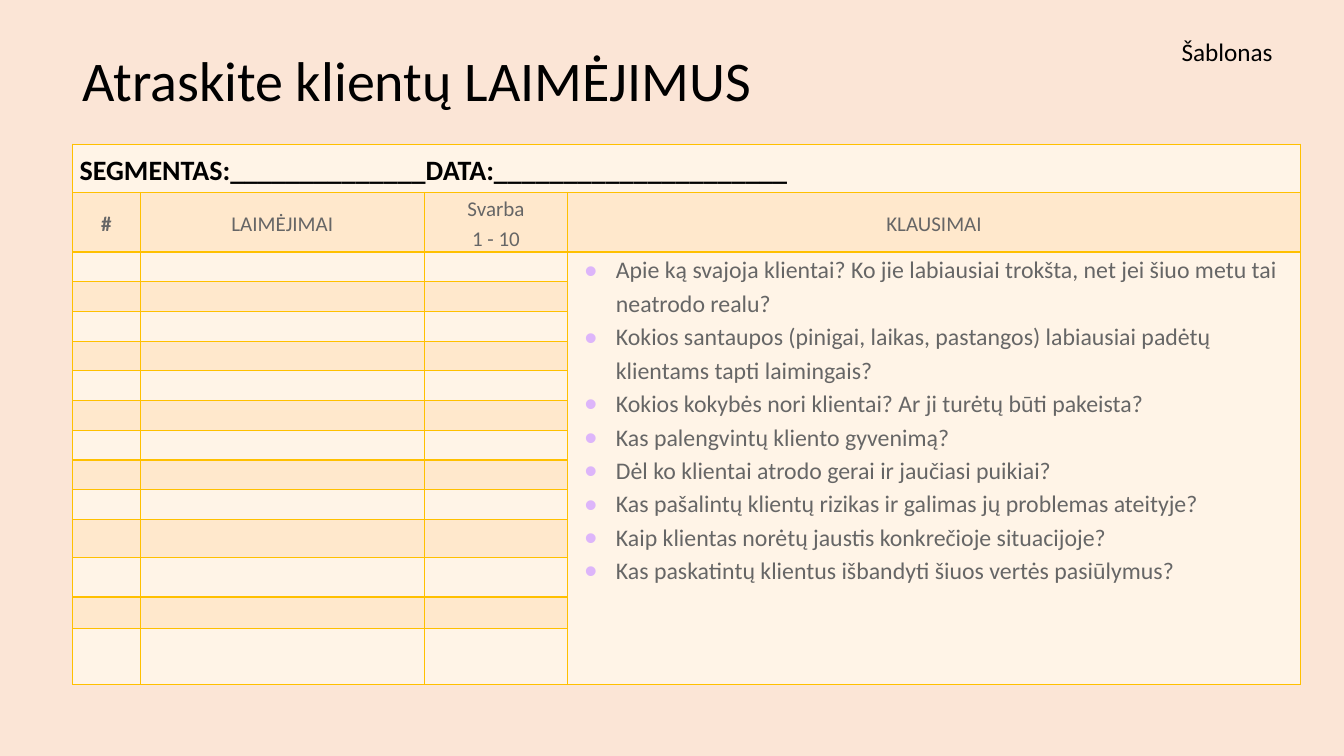
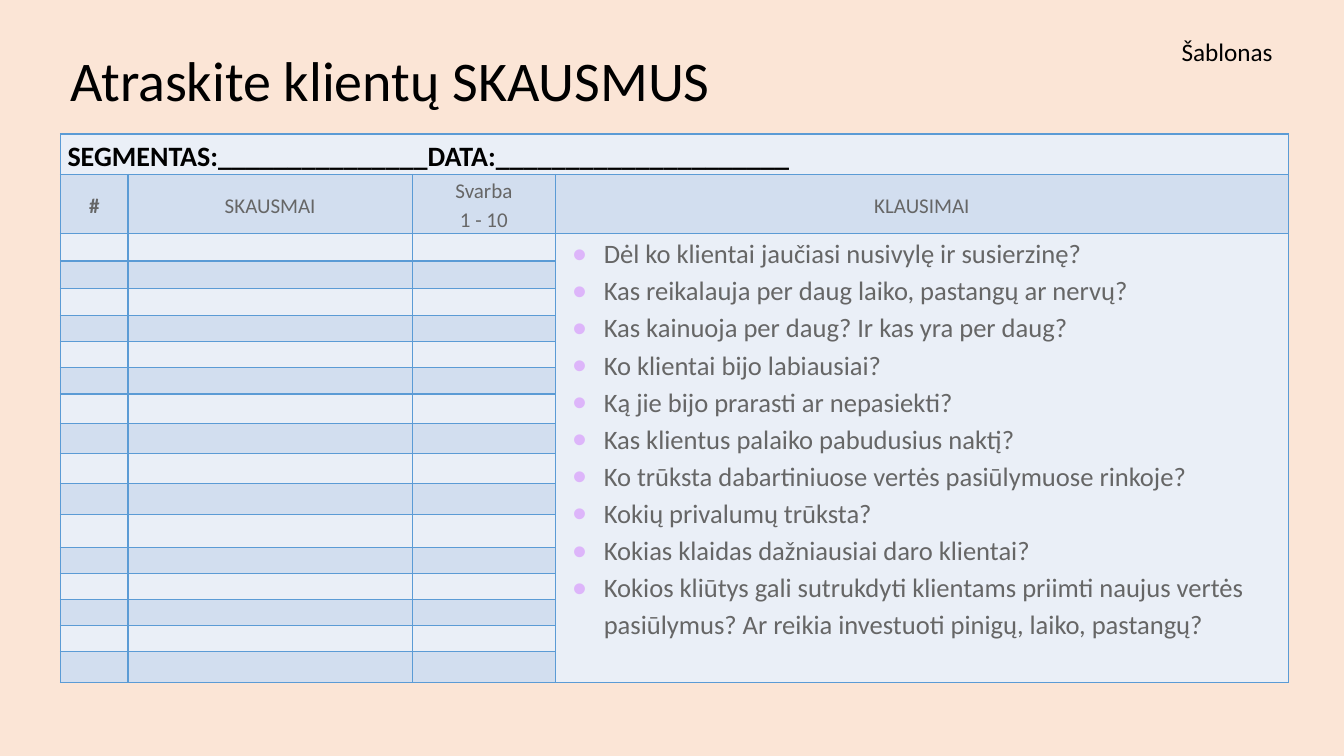
from lxml import etree
from pptx import Presentation
from pptx.dml.color import RGBColor
from pptx.enum.shapes import MSO_SHAPE
from pptx.enum.text import MSO_ANCHOR, MSO_AUTO_SIZE, PP_ALIGN
from pptx.oxml.ns import qn
from pptx.util import Inches, Pt

RECTANGLE = MSO_SHAPE.RECTANGLE
TOP, MIDDLE = MSO_ANCHOR.TOP, MSO_ANCHOR.MIDDLE
LEFT, CENTER = PP_ALIGN.LEFT, PP_ALIGN.CENTER
GROW = MSO_AUTO_SIZE.SHAPE_TO_FIT_TEXT

# Shared look
FONT = "Calibri"
BLACK = RGBColor(0x00, 0x00, 0x00)
GREY = RGBColor(0x66, 0x66, 0x66)
PEACH = RGBColor(0xFB, 0xE5, 0xD6)
LILAC = RGBColor(0xDD, 0xB5, 0xFA)
GOLD = RGBColor(0xFF, 0xC0, 0x00)
CREAM = RGBColor(0xFF, 0xF4, 0xE7)
APRICOT = RGBColor(0xFF, 0xE8, 0xCC)
BLUE = RGBColor(0x5B, 0x9B, 0xD5)
ICE = RGBColor(0xEA, 0xEF, 0xF7)
SKY = RGBColor(0xD2, 0xDE, 0xEF)

SLIDE_W, SLIDE_H = 13.33, 7.5
COLUMNS = [0.67, 2.82, 1.42, 7.27]
LINE_SPACING = 1.15

GAINS = {
    "title": "Atraskite klientų LAIMĖJIMUS",
    "segment": "SEGMENTAS:______________DATA:_____________________",
    "topic": "LAIMĖJIMAI",
    "questions": [
        "Apie ką svajoja klientai? Ko jie labiausiai trokšta, net jei šiuo metu tai neatrodo realu?",
        "Kokios santaupos (pinigai, laikas, pastangos) labiausiai padėtų klientams tapti laimingais?",
        "Kokios kokybės nori klientai? Ar ji turėtų būti pakeista?",
        "Kas palengvintų kliento gyvenimą?",
        "Dėl ko klientai atrodo gerai ir jaučiasi puikiai?",
        "Kas pašalintų klientų rizikas ir galimas jų problemas ateityje?",
        "Kaip klientas norėtų jaustis konkrečioje situacijoje?",
        "Kas paskatintų klientus išbandyti šiuos vertės pasiūlymus?",
    ],
    "question_size": 17,
    "left": 0.72,
    "top": 1.43,
    "rows": [0.48, 0.59] + [0.295] * 9 + [0.38, 0.39, 0.31, 0.56],
    "bands": (CREAM, APRICOT),
    "border": GOLD,
}

PAINS = {
    "title": "Atraskite klientų SKAUSMUS",
    "segment": "SEGMENTAS:_______________DATA:_____________________",
    "topic": "SKAUSMAI",
    "questions": [
        "Dėl ko klientai jaučiasi nusivylę ir susierzinę?",
        "Kas reikalauja per daug laiko, pastangų ar nervų?",
        "Kas kainuoja per daug? Ir kas yra per daug?",
        "Ko klientai bijo labiausiai?",
        "Ką jie bijo prarasti ar nepasiekti?",
        "Kas klientus palaiko pabudusius naktį?",
        "Ko trūksta dabartiniuose vertės pasiūlymuose rinkoje?",
        "Kokių privalumų trūksta?",
        "Kokias klaidas dažniausiai daro klientai?",
        "Kokios kliūtys gali sutrukdyti klientams priimti naujus vertės pasiūlymus? "
        "Ar reikia investuoti pinigų, laiko, pastangų?",
    ],
    "question_size": 19,
    "left": 0.6,
    "top": 1.33,
    "rows": ([0.4, 0.59] + [0.27] * 3 + [0.26] * 3 + [0.29, 0.3, 0.3, 0.31, 0.32]
             + [0.26] * 4 + [0.3]),
    "bands": (ICE, SKY),
    "border": BLUE,
}


def style_run(r, size, color, bold=False):
    r.font.name = FONT
    r.font.size = Pt(size)
    r.font.bold = bold
    r.font.color.rgb = color


def add_background(slide):
    sp = slide.shapes.add_shape(RECTANGLE, 0, 0, Inches(SLIDE_W), Inches(SLIDE_H))
    sp.shadow.inherit = False
    sp.fill.solid()
    sp.fill.fore_color.rgb = PEACH
    sp.line.fill.background()


def add_label(slide, box, text, size, wrap=True):
    tf = slide.shapes.add_textbox(*map(Inches, box)).text_frame
    tf.word_wrap = wrap
    tf.auto_size = GROW
    tf.text = text
    style_run(tf.paragraphs[0].runs[0], size, BLACK)


def add_bullet(p):
    pPr = p._p.get_or_add_pPr()
    pPr.set("marL", str(Inches(0.41)))
    pPr.set("indent", str(Inches(-0.31)))
    bullet_color = etree.SubElement(pPr, qn("a:buClr"))
    etree.SubElement(bullet_color, qn("a:srgbClr"), val=str(LILAC))
    etree.SubElement(pPr, qn("a:buSzPct"), val="150000")
    etree.SubElement(pPr, qn("a:buFont"), typeface="Arial")
    etree.SubElement(pPr, qn("a:buChar"), char="•")


def paint_cell(cell, fill, border):
    tcPr = cell._tc.get_or_add_tcPr()
    for side in ("a:lnL", "a:lnR", "a:lnT", "a:lnB"):
        ln = etree.SubElement(tcPr, qn(side), w=str(Pt(1)))
        solid = etree.SubElement(ln, qn("a:solidFill"))
        etree.SubElement(solid, qn("a:srgbClr"), val=str(border))
    cell.fill.solid()
    cell.fill.fore_color.rgb = fill
    cell.margin_left = cell.margin_right = Inches(0.07)
    cell.margin_top = cell.margin_bottom = 0
    # A small end mark lets empty rows keep their height
    p = cell.text_frame.paragraphs[0]
    etree.SubElement(p._p, qn("a:endParaRPr"), sz="800")


def write_cell(cell, lines, size, color=GREY, bold=False, align=CENTER,
               anchor=MIDDLE, bullets=False):
    cell.vertical_anchor = anchor
    tf = cell.text_frame
    tf.text = "\n".join(lines)
    for p in tf.paragraphs:
        p.alignment = align
        p.line_spacing = LINE_SPACING
        if bullets:
            add_bullet(p)
        style_run(p.runs[0], size, color, bold)


def add_worksheet(slide, sheet):
    rows = sheet["rows"]
    frame = slide.shapes.add_table(
        len(rows), len(COLUMNS), Inches(sheet["left"]), Inches(sheet["top"]),
        Inches(sum(COLUMNS)), Inches(sum(rows)))
    table = frame.table
    table.first_row = table.horz_banding = False
    for column, width in zip(table.columns, COLUMNS):
        column.width = Inches(width)
    for i, (row, height) in enumerate(zip(table.rows, rows)):
        row.height = Inches(height)
        for cell in row.cells:
            paint_cell(cell, sheet["bands"][i % 2], sheet["border"])

    # Segment line across the top
    table.cell(0, 0).merge(table.cell(0, len(COLUMNS) - 1))
    write_cell(table.cell(0, 0), [sheet["segment"]], 20, BLACK, bold=True, align=LEFT)

    # Column headings
    headings = [["#"], [sheet["topic"]], ["Svarba", "1 - 10"], ["KLAUSIMAI"]]
    for i, lines in enumerate(headings):
        write_cell(table.cell(1, i), lines, 15, bold=i == 0)

    # Questions beside the empty rows
    questions = table.cell(2, 3)
    questions.merge(table.cell(len(rows) - 1, 3))
    write_cell(questions, sheet["questions"], sheet["question_size"],
               align=LEFT, anchor=TOP, bullets=True)


def add_sheet_slide(prs, sheet):
    slide = prs.slides.add_slide(prs.slide_layouts[6])
    add_background(slide)
    add_worksheet(slide, sheet)
    add_label(slide, (sheet["left"], 0.4, 8.86, 0.77), sheet["title"], 40)
    add_label(slide, (11.62, 0.31, 1.12, 0.4), "Šablonas", 18, wrap=False)


def main():
    prs = Presentation()
    prs.slide_width = Inches(SLIDE_W)
    prs.slide_height = Inches(SLIDE_H)
    for sheet in (GAINS, PAINS):
        add_sheet_slide(prs, sheet)
    prs.save("out.pptx")


if __name__ == "__main__":
    main()
